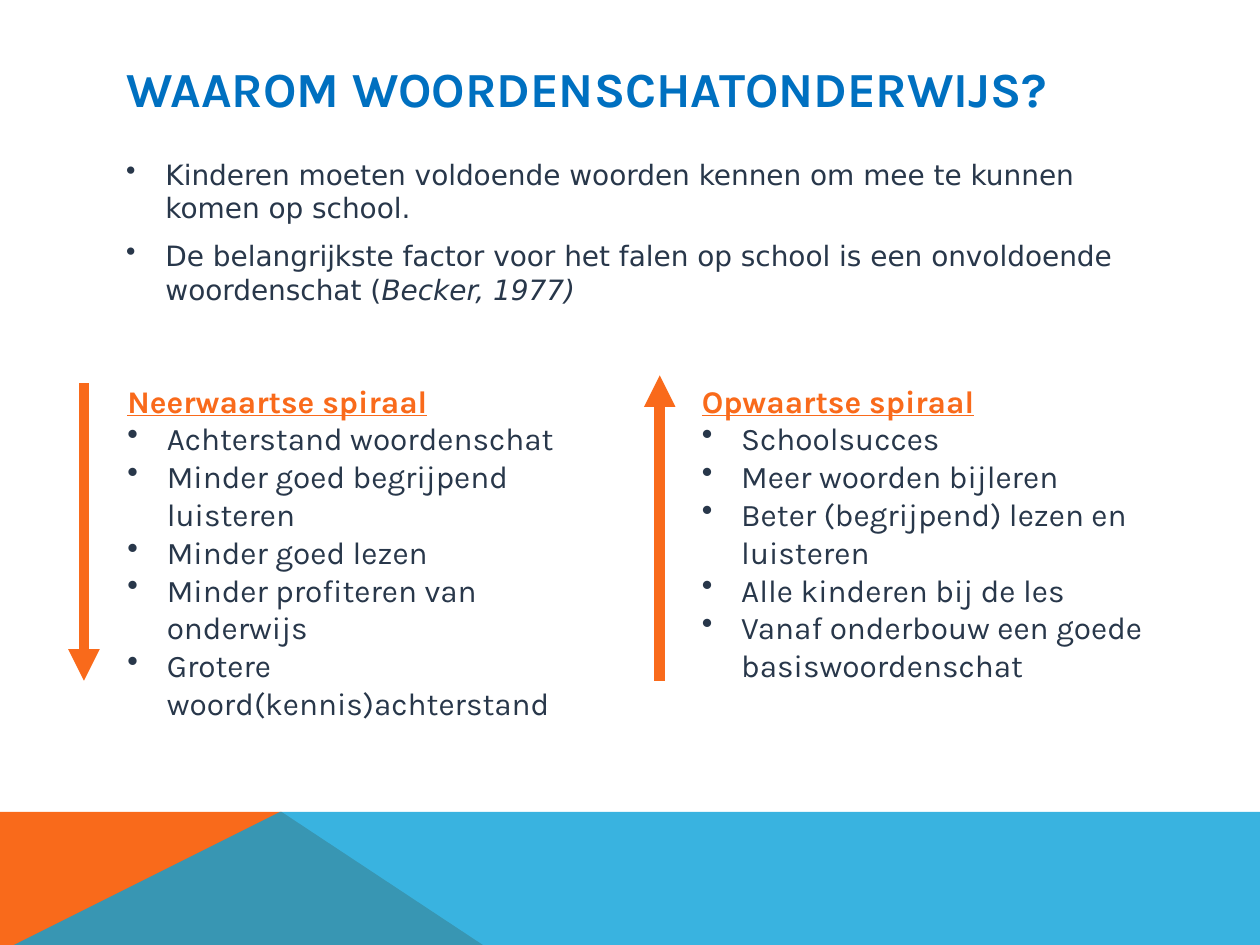
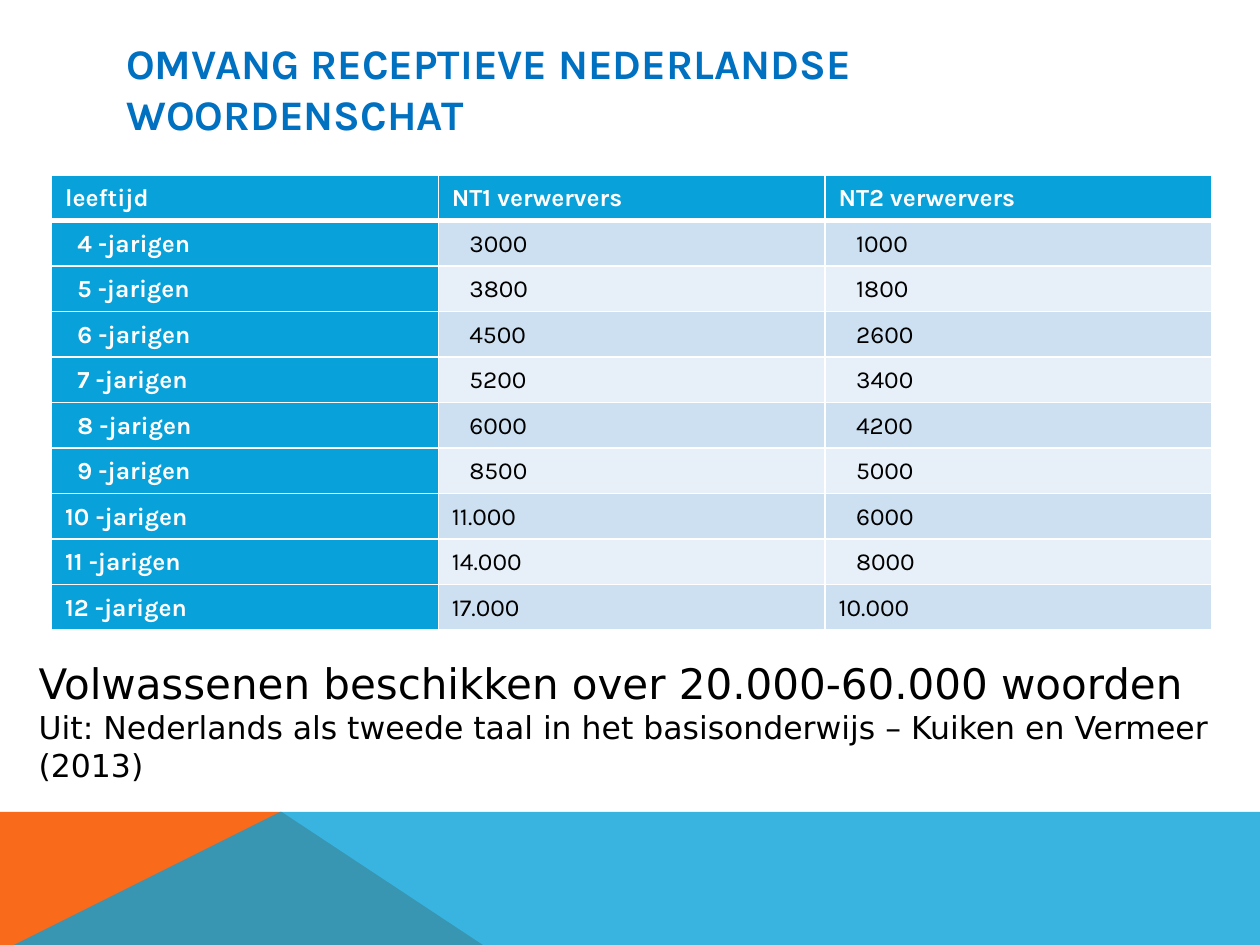
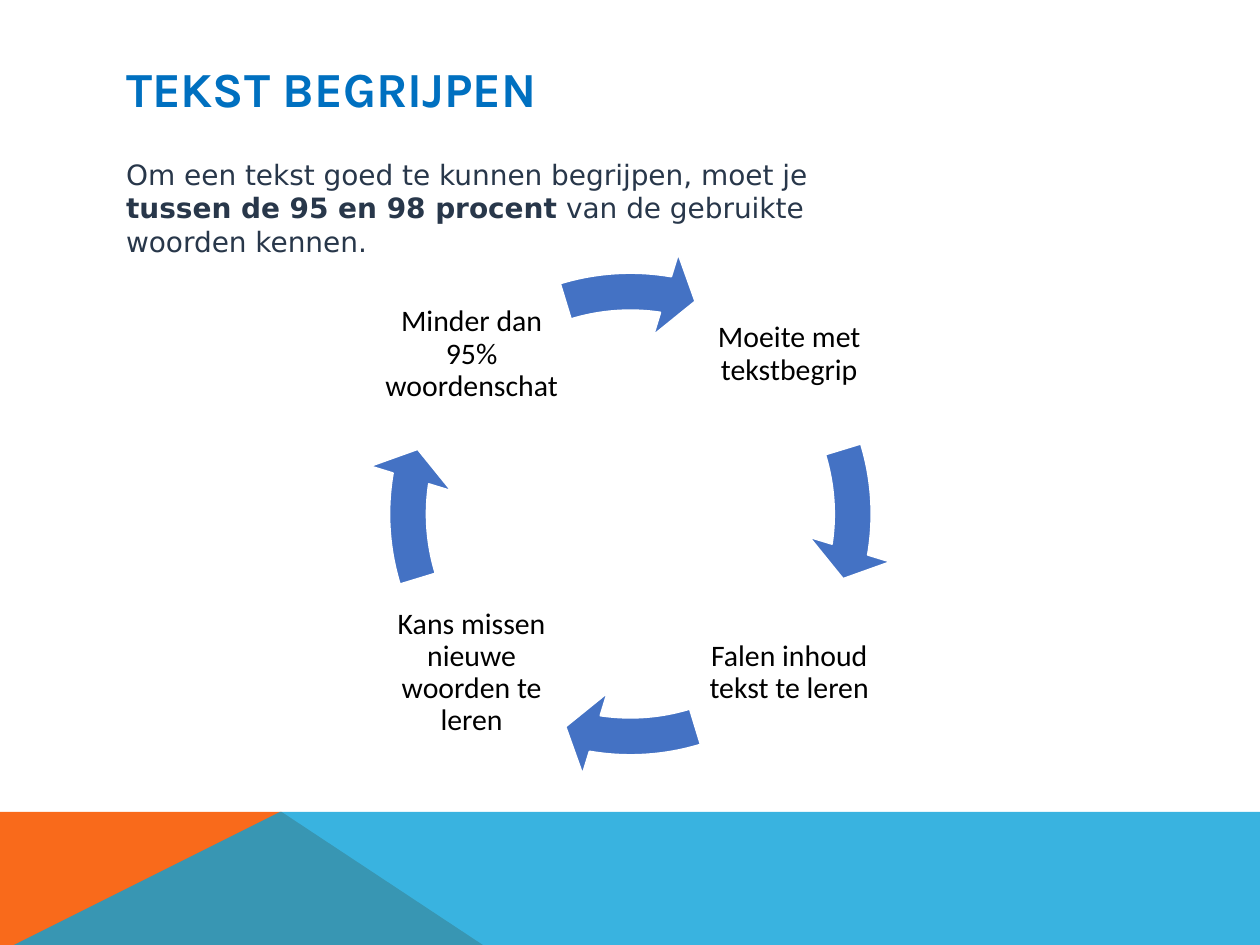
from pptx import Presentation
from pptx.dml.color import RGBColor
from pptx.enum.shapes import MSO_CONNECTOR, MSO_SHAPE
from pptx.enum.text import MSO_ANCHOR, MSO_AUTO_SIZE, PP_ALIGN
from pptx.oxml import parse_xml
from pptx.oxml.ns import nsdecls
from pptx.util import Pt

# Shared look
ORANGE, BLUE, TITLE_BLUE, INK = "F96A1B", "08A1D9", "0070C0", "28374A"
ARROW_BLUE, WHITE, BLACK = "4472C4", "FFFFFF", "000000"
ROW_TINTS = ["CCE0F1", "E7F0F8"]
HEADING, BODY, CYCLE = "Karla", "DejaVu Sans", "Calibri"
SLIDE_SIZE = (720, 540)
TITLE_BOX = (65, 28.8, 592, 43.2)
BULLET_INDENT = 22.5
BANDS = [  # outline, colour, opacity in percent
    ([(0, 544), (0, 464), (161, 464), (281.5, 544)], ORANGE, 100),
    ([(0, 544), (160.5, 464), (720, 464), (720, 544)], BLUE, 80),
]

# Slide 1
WHY_TITLE = "WAAROM WOORDENSCHATONDERWIJS?"
REASONS = [
    [("Kinderen moeten voldoende woorden kennen om mee te kunnen komen op school.", "")],
    [("De belangrijkste factor voor het falen op school is een onvoldoende woordenschat (", ""),
     ("Becker, 1977)", "italic")],
]
SPIRALS = [  # heading, steps, text box, arrow x, arrow start and end y
    ("Neerwaartse spiraal",
     ["Achterstand woordenschat", "Minder goed begrijpend luisteren", "Minder goed lezen",
      "Minder profiteren van onderwijs", "Grotere woord(kennis)achterstand"],
     (65.7, 214.5, 295, 138), 48, (219, 389)),
    ("Opwaartse spiraal",
     ["Schoolsucces", "Meer woorden bijleren", "Beter (begrijpend) lezen en luisteren",
      "Alle kinderen bij de les", "Vanaf onderbouw een goede basiswoordenschat"],
     (394, 214.5, 316, 160), 377, (389, 214.5)),
]

# Slide 2
SIZE_TITLE = "OMVANG RECEPTIEVE NEDERLANDSE WOORDENSCHAT"
COLUMNS = ["leeftijd", "NT1 verwervers", "NT2 verwervers"]
VOCABULARY = [
    ("4 -jarigen", "3000", "1000"),
    ("5 -jarigen", "3800", "1800"),
    ("6 -jarigen", "4500", "2600"),
    ("7 -jarigen", "5200", "3400"),
    ("8 -jarigen", "6000", "4200"),
    ("9 -jarigen", "8500", "5000"),
    ("10 -jarigen", "11.000", "6000"),
    ("11 -jarigen", "14.000", "8000"),
    ("12 -jarigen", "17.000", "10.000"),
]
SHORT_ENTRY_INDENTS = [7, 10, 10]
ADULTS = "Volwassenen beschikken over 20.000-60.000 woorden"
SOURCE = "Uit: Nederlands als tweede taal in het basisonderwijs – Kuiken en Vermeer (2013)"

# Slide 3
TEXT_TITLE = "TEKST BEGRIJPEN"
THRESHOLD = [
    ("Om een tekst goed te kunnen begrijpen, moet je ", ""),
    ("tussen de 95 en 98 procent", "bold"),
    (" van de gebruikte woorden kennen.", ""),
]
CYCLE_STEPS = [  # clockwise from top right: text, column, row
    ("Moeite met tekstbegrip", 1, 0),
    ("Falen inhoud tekst te leren", 1, 1),
    ("Kans missen nieuwe woorden te leren", 0, 1),
    ("Minder dan 95% woordenschat", 0, 0),
]


def rgb(color):
    return RGBColor.from_string(color)


def points(*lengths):
    return [Pt(length) for length in lengths]


def style(paragraph, font, size, color, bold=False):
    paragraph.font.name = font
    paragraph.font.size = Pt(size)
    paragraph.font.bold = bold
    paragraph.font.color.rgb = rgb(color)


def add_bullet(paragraph):
    props = paragraph._p.get_or_add_pPr()
    props.set("marL", str(Pt(BULLET_INDENT)))
    props.set("indent", str(-Pt(BULLET_INDENT)))
    bullet = parse_xml(f'<a:buChar {nsdecls("a")} char="•"/>')
    props.insert_element_before(bullet, "a:tabLst", "a:defRPr", "a:extLst")


def add_runs(paragraph, runs):
    for text, emphasis in runs:
        run = paragraph.add_run()
        run.text = text
        if emphasis:
            setattr(run.font, emphasis, True)


def add_text_frame(slide, box):
    frame = slide.shapes.add_textbox(*points(*box)).text_frame
    frame.word_wrap = True
    return frame


def next_paragraph(frame):
    first = frame.paragraphs[0]
    return frame.add_paragraph() if first.runs else first


def add_bands(prs, slide):
    """Draw the bottom bands and move them to the master, behind everything."""
    tree = prs.slide_master.shapes.element
    for position, (outline, color, opacity) in enumerate(BANDS, start=2):
        builder = slide.shapes.build_freeform(*outline[0], scale=float(Pt(1)))
        builder.add_line_segments(outline[1:], close=True)
        band = builder.convert_to_shape()
        band.shadow.inherit = False
        band.line.fill.background()
        band.fill.solid()
        band.fill.fore_color.rgb = rgb(color)
        if opacity < 100:
            band.element.xpath("./p:spPr/a:solidFill/a:srgbClr")[0].append(
                parse_xml(f'<a:alpha {nsdecls("a")} val="{opacity * 1000}"/>'))
        tree.insert(position, band.element)


def add_slide(prs, heading, size=28):
    slide = prs.slides.add_slide(prs.slide_layouts[5])
    title = slide.shapes.title
    title.left, title.top, title.width, title.height = points(*TITLE_BOX)
    frame = title.text_frame
    frame.text = heading
    frame.auto_size = MSO_AUTO_SIZE.NONE
    frame.vertical_anchor = MSO_ANCHOR.MIDDLE
    paragraph = frame.paragraphs[0]
    paragraph.alignment = PP_ALIGN.LEFT
    style(paragraph, HEADING, size, TITLE_BLUE, bold=True)
    return slide


def add_arrow(slide, x, start, end):
    arrow = slide.shapes.add_connector(MSO_CONNECTOR.STRAIGHT, *points(x, start, x, end))
    arrow.line.color.rgb = rgb(ORANGE)
    arrow.line.width = Pt(6)
    props = arrow.element.spPr
    props.get_or_add_ln().append(parse_xml(f'<a:tailEnd {nsdecls("a")} type="triangle"/>'))
    props.append(parse_xml(f'<a:effectLst {nsdecls("a")}/>'))


def fill_why_slide(slide):
    # Reasons
    frame = add_text_frame(slide, (65, 86.4, 592, 120))
    for runs in REASONS:
        paragraph = next_paragraph(frame)
        add_runs(paragraph, runs)
        paragraph.space_before = Pt(8)
        style(paragraph, BODY, 16, INK)
        add_bullet(paragraph)

    # Spirals with their arrows
    for heading, steps, box, arrow_x, (start, end) in SPIRALS:
        frame = add_text_frame(slide, box)
        frame.text = heading
        style(frame.paragraphs[0], HEADING, 18, ORANGE, bold=True)
        frame.paragraphs[0].font.underline = True
        for step in steps:
            paragraph = frame.add_paragraph()
            paragraph.text = step
            style(paragraph, HEADING, 18, INK)
            add_bullet(paragraph)
        add_arrow(slide, arrow_x, start, end)


def set_borders(cell, top, bottom):
    widths = {"lnL": 1, "lnR": 1, "lnT": top, "lnB": bottom}
    props = cell._tc.get_or_add_tcPr()
    for position, (side, width) in enumerate(widths.items()):
        props.insert(position, parse_xml(
            f'<a:{side} {nsdecls("a")} w="{Pt(width)}"><a:solidFill>'
            f'<a:srgbClr val="{WHITE}"/></a:solidFill></a:{side}>'))


def fill_size_slide(slide):
    # Vocabulary per age
    rows = [COLUMNS, *VOCABULARY]
    table = slide.shapes.add_table(
        len(rows), len(COLUMNS), *points(29.5, 100, 663, 26 * len(rows))).table
    table.first_row = table.horz_banding = False
    for r, row in enumerate(rows):
        for c, entry in enumerate(row):
            is_header = r == 0 or c == 0
            longest = max(len(record[c]) for record in VOCABULARY)
            is_short = r > 0 and len(entry) < longest
            cell = table.cell(r, c)
            cell.text = entry
            cell.vertical_anchor = MSO_ANCHOR.MIDDLE
            cell.margin_left = Pt(7.7 + (SHORT_ENTRY_INDENTS[c] if is_short else 0))
            cell.margin_right = Pt(7.7)
            cell.margin_top = cell.margin_bottom = 0
            cell.fill.solid()
            cell.fill.fore_color.rgb = rgb(BLUE if is_header else ROW_TINTS[(r - 1) % 2])
            set_borders(cell, top=3 if r == 1 else 1, bottom=3 if r == 0 else 1)
            paragraph = cell.text_frame.paragraphs[0]
            paragraph.line_spacing = 1.07
            style(paragraph, HEADING, 14, WHITE if is_header else BLACK, bold=is_header)

    # Adults and source
    frame = add_text_frame(slide, (15, 372.3, 705, 80))
    for text, size in [(ADULTS, 24), (SOURCE, 18)]:
        paragraph = next_paragraph(frame)
        add_runs(paragraph, [(text, "")])
        style(paragraph, BODY, size, BLACK)


def fill_text_slide(slide):
    # Threshold
    paragraph = add_text_frame(slide, (65, 86.4, 414, 70)).paragraphs[0]
    add_runs(paragraph, THRESHOLD)
    paragraph.space_before = Pt(8)
    style(paragraph, BODY, 16, INK)

    # Cycle: each step is followed by an arrow, a quarter turn further
    quarter, full_turn = 54, 216
    for i, (step, column, row) in enumerate(CYCLE_STEPS):
        frame = add_text_frame(slide, (216 + 181.5 * column, 149 + 182 * row, 107, 107))
        frame.text = step
        frame.vertical_anchor = MSO_ANCHOR.MIDDLE
        frame.margin_left = frame.margin_right = Pt(1.5)
        frame.margin_top = frame.margin_bottom = Pt(1.5)
        paragraph = frame.paragraphs[0]
        paragraph.alignment = PP_ALIGN.CENTER
        paragraph.line_spacing = 0.9
        style(paragraph, CYCLE, 17, BLACK)

        arrow = slide.shapes.add_shape(
            MSO_SHAPE.CIRCULAR_ARROW, *points(209, 142.5, 302.5, 302.5))
        arrow.shadow.inherit = False
        arrow.fill.solid()
        arrow.fill.fore_color.rgb = rgb(ARROW_BLUE)
        arrow.line.color.rgb = rgb(WHITE)
        arrow.line.width = Pt(1)
        turn = quarter * i
        bends = [0.07, 4.65, 5.51 + turn, (205.84 + turn) % full_turn, 0.08]
        for position, bend in enumerate(bends):
            arrow.adjustments[position] = bend


def main():
    prs = Presentation()
    prs.slide_width, prs.slide_height = points(*SLIDE_SIZE)
    why = add_slide(prs, WHY_TITLE)
    add_bands(prs, why)
    fill_why_slide(why)
    fill_size_slide(add_slide(prs, SIZE_TITLE, size=24))
    fill_text_slide(add_slide(prs, TEXT_TITLE))
    prs.save("out.pptx")


if __name__ == "__main__":
    main()
